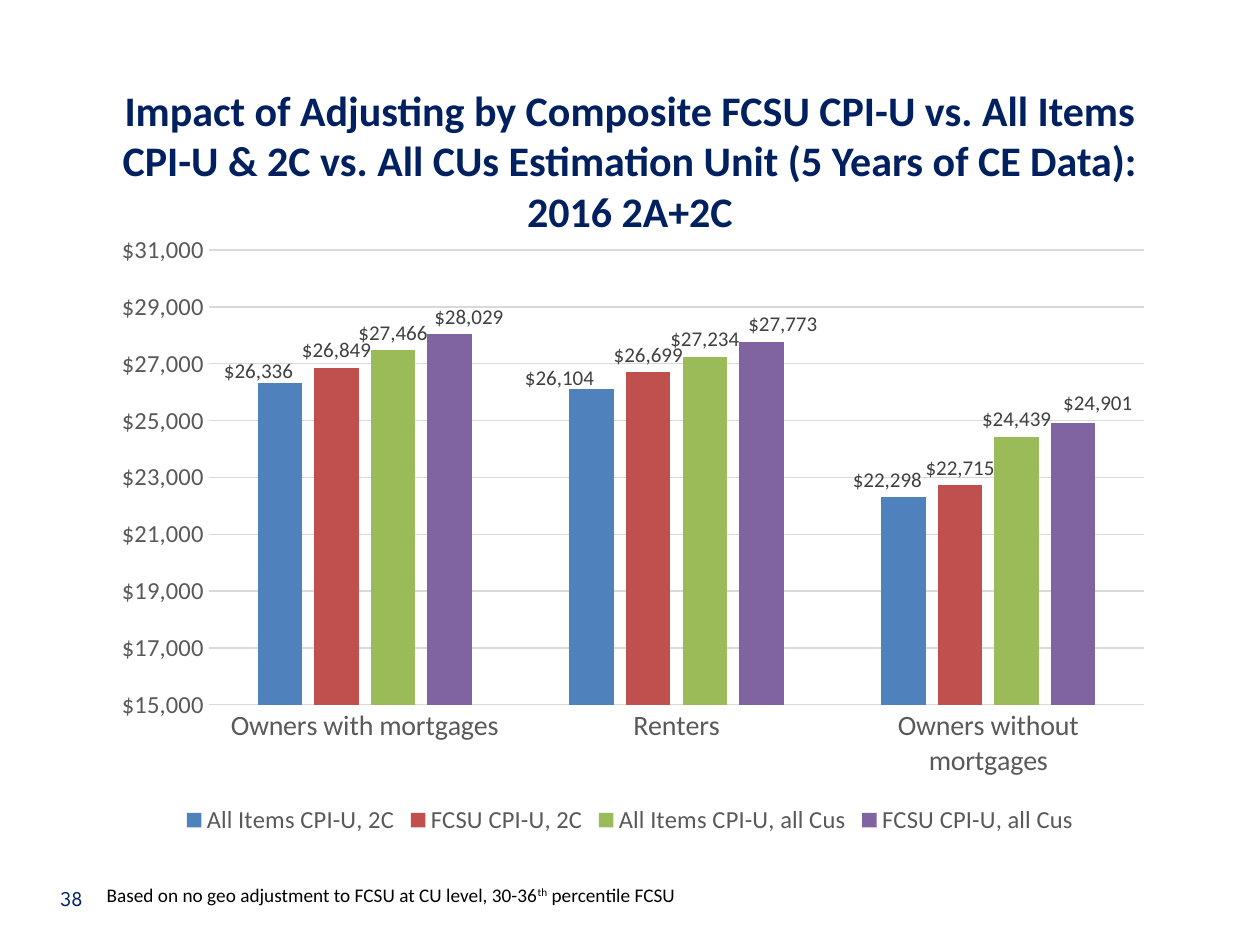
import pptx
import pptx.chart.data
import pptx.dml.color
import pptx.enum.chart
import pptx.enum.text
import pptx.oxml
import pptx.oxml.ns
import pptx.util
from pptx.util import Cm

COLORS = {
    "navy": "002060", "black": "000000", "axis": "595959", "label": "404040",
    "grid": "D9D9D9", "blue": "4F81BD", "red": "C0504D", "green": "9BBB59",
    "purple": "8064A2",
}
DOLLARS = '"$"#,##0'


def style_font(font, size, color, name="Calibri", bold=False):
    font.name = name
    font.size = pptx.util.Pt(size)
    font.bold = bold
    font.color.rgb = pptx.dml.color.RGBColor.from_string(COLORS[color])


def manual_layout(**settings):
    layout = pptx.oxml.parse_xml(
        f'<c:layout {pptx.oxml.ns.nsdecls("c")}><c:manualLayout/></c:layout>')
    for tag, value in settings.items():
        item = layout[0].makeelement(pptx.oxml.ns.qn(f"c:{tag}"), {"val": str(value)})
        layout[0].append(item)
    return layout


deck = pptx.Presentation()
deck.slide_width, deck.slide_height = Cm(25.4), Cm(19.05)
page = deck.slides.add_slide(deck.slide_layouts[6])

# Chart data
data = pptx.chart.data.CategoryChartData(number_format=DOLLARS)
data.categories = ["Owners with mortgages", "Renters", "Owners without mortgages"]
# Name, values, color, label shifts as fractions of the chart size
series_rows = [
    ("All Items CPI-U, 2C", (26336, 26104, 22298), "blue",
     [(-0.02, 0.01), (-0.03, 0.01), (-0.015, 0)]),
    ("FCSU CPI-U, 2C", (26849, 26699, 22715), "red", []),
    ("All Items CPI-U, all Cus", (27466, 27234, 24439), "green", []),
    ("FCSU CPI-U, all Cus", (28029, 27773, 24901), "purple",
     [(0.018, 0), (0.02, 0), (0.023, -0.005)]),
]
for name, values, color, shifts in series_rows:
    data.add_series(name, values)

# Column chart
chart = page.shapes.add_chart(
    pptx.enum.chart.XL_CHART_TYPE.COLUMN_CLUSTERED,
    Cm(1.9), Cm(4.24), Cm(21.6), Cm(12.7), data).chart
style_font(chart.font, 10, "black")
chart.has_title = False
plot = chart.plots[0]
plot.gap_width = 219
plot.overlap = -27
plot.vary_by_categories = False

# Plot area position
plot_area = chart.element.find(".//" + pptx.oxml.ns.qn("c:plotArea"))
for old_layout in plot_area.findall(pptx.oxml.ns.qn("c:layout")):
    plot_area.remove(old_layout)
plot_area.insert(0, manual_layout(
    layoutTarget="inner", xMode="edge", yMode="edge",
    x=0.107, y=0.018, w=0.873, h=0.767))

# Series and data labels
above = pptx.enum.chart.XL_LABEL_POSITION.OUTSIDE_END
for series, (name, values, color, shifts) in zip(plot.series, series_rows):
    series.format.fill.solid()
    series.format.fill.fore_color.rgb = pptx.dml.color.RGBColor.from_string(COLORS[color])
    series.invert_if_negative = False
    labels = series.data_labels
    labels.show_value = True
    labels.number_format = DOLLARS
    labels.number_format_is_linked = False
    labels.position = above
    style_font(labels.font, 12, "label")
    for index, (across, down) in enumerate(shifts):
        label = series.points[index].data_label
        label.position = above
        style_font(label.font, 12, "label")
    label_tags = series.data_labels._element.findall(pptx.oxml.ns.qn("c:dLbl"))
    for label_tag, (across, down) in zip(label_tags, shifts):
        label_tag.insert(1, manual_layout(x=across, y=down))

# Axes
grid_color = pptx.dml.color.RGBColor.from_string(COLORS["grid"])
for axis, size in ((chart.category_axis, 16), (chart.value_axis, 14)):
    axis.major_tick_mark = pptx.enum.chart.XL_TICK_MARK.NONE
    axis.minor_tick_mark = pptx.enum.chart.XL_TICK_MARK.NONE
    style_font(axis.tick_labels.font, size, "axis")
value_axis = chart.value_axis
value_axis.minimum_scale, value_axis.maximum_scale = 15000, 32000
value_axis.major_unit = 2000
value_axis.tick_labels.number_format = DOLLARS
value_axis.tick_labels.number_format_is_linked = False
value_axis.format.line.fill.background()
for line in (chart.category_axis.format.line, value_axis.major_gridlines.format.line):
    line.color.rgb = grid_color
    line.width = pptx.util.Pt(0.75)

# Legend
chart.has_legend = True
chart.legend.position = pptx.enum.chart.XL_LEGEND_POSITION.BOTTOM
chart.legend.include_in_layout = False
style_font(chart.legend.font, 14, "axis")

# Title, slide number and footnote
title = ("Impact of Adjusting by Composite FCSU CPI-U vs. All Items CPI-U & 2C "
         "vs. All CUs Estimation Unit (5 Years of CE Data): 2016 2A+2C")
footnote = ["Based on no geo adjustment to FCSU at CU level, 30-36", "th", " percentile FCSU"]
center, left = pptx.enum.text.PP_ALIGN.CENTER, pptx.enum.text.PP_ALIGN.LEFT
text_rows = [
    ((1.9, 1.7, 21.6, 3.07), [title], 24, "navy", "Calibri", True, center, (0, 0), True),
    ((1.22, 17.86, 10.92, 0.61), ["38"], 12, "navy", "League Spartan", False, left, (0, 0), True),
    ((1.9, 17.68, 12, 0.73), footnote, 11, "black", "Calibri", False, left, (0.25, 0.13), False),
]
for place, pieces, size, color, font_name, bold, align, insets, wrap in text_rows:
    box = page.shapes.add_textbox(*map(Cm, place))
    frame = box.text_frame
    frame.word_wrap = wrap
    frame.margin_left = frame.margin_right = Cm(insets[0])
    frame.margin_top = frame.margin_bottom = Cm(insets[1])
    paragraph = frame.paragraphs[0]
    paragraph.alignment = align
    for piece in pieces:
        span = paragraph.add_run()
        span.text = piece
        style_font(span.font, size, color, font_name, bold)
        if piece == "th":
            span.font._element.set("baseline", "30000")

deck.save("out.pptx")
